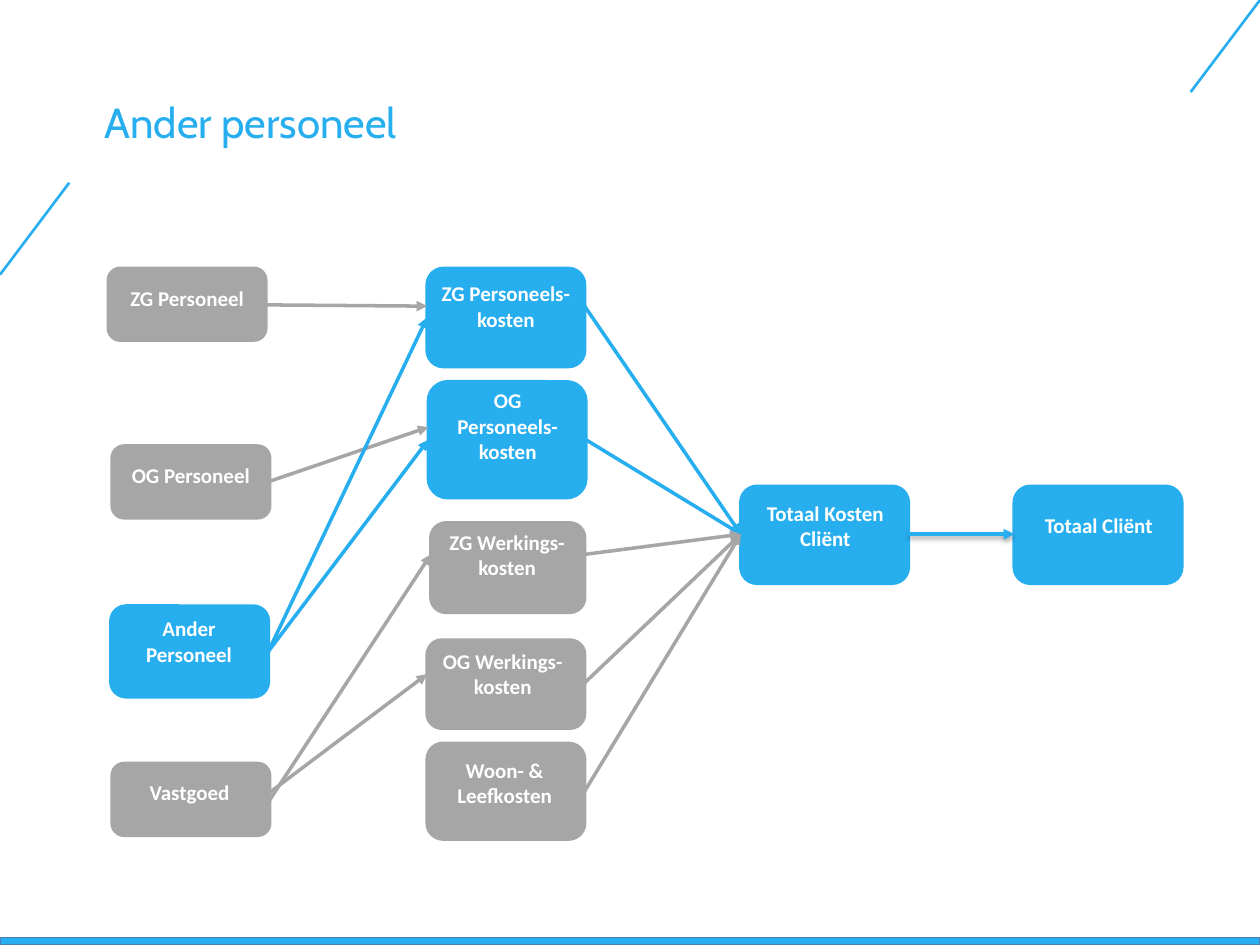
from dataclasses import dataclass

import lxml.etree
import pptx
import pptx.dml.color
import pptx.enum.shapes
import pptx.enum.text
import pptx.oxml
import pptx.oxml.ns
import pptx.util

# The slide is a grid of 100 columns and 75 rows of square cells.
COLUMNS, ROWS = 100, 75
CELL = pptx.util.Inches(0.1)
BLUE, GREY, WHITE, EDGE = "27AEEF", "A6A6A6", "FFFFFF", "4B7EBC"


@dataclass(frozen=True)
class Node:
    """A rounded box; the label frame is offset from its top left corner."""
    label: str
    left: float
    top: float
    width: float
    height: float
    color: str
    label_dx: float
    label_dy: float
    label_width: float
    label_lines: int


@dataclass(frozen=True)
class Flow:
    """An arrow from the right side of one node to the left side of another."""
    source: str
    target: str
    start_row: float
    end_row: float
    color: str
    shadow: bool = False


NODES = [
    Node("ZG Personeel", 8.6, 21.3, 12.5, 5.7, GREY, 0, 0.9, 12.5, 1),
    Node("OG Personeel", 8.9, 35.4, 12.5, 5.7, GREY, 0.1, 0.8, 12.3, 1),
    Node("Ander Personeel", 8.8, 48.1, 12.5, 7.2, BLUE, 0.1, 0.3, 12.2, 2),
    Node("Vastgoed", 8.9, 60.6, 12.5, 5.7, GREY, -0.1, 0.8, 12.5, 1),
    Node("ZG Personeels-kosten", 33.9, 21.3, 12.5, 7.8, BLUE, 0, 0.5, 12.5, 2),
    Node("OG Personeels-kosten", 34, 30.3, 12.5, 9.2, BLUE, 0.1, 0, 12.4, 3),
    Node("ZG Werkings-kosten", 34.2, 41.5, 12.2, 7.1, GREY, 0.2, 0, 11.7, 2),
    Node("OG Werkings-kosten", 33.9, 50.8, 12.5, 7, GREY, 0.1, 0.2, 11.8, 2),
    Node("Woon- & Leefkosten", 33.9, 59, 12.5, 7.6, GREY, 0.3, 0.6, 11.7, 2),
    Node("Totaal Kosten Cliënt", 58.8, 38.6, 13.3, 7.7, BLUE, 0.1, 0.6, 13.2, 2),
    Node("Totaal Cliënt", 80.5, 38.6, 13.3, 7.7, BLUE, 0.1, 1.6, 13.2, 1),
]

TOTAL = "Totaal Kosten Cliënt"
TOTAL_ROW = 42.4
FLOWS = [
    Flow("ZG Personeel", "ZG Personeels-kosten", 24.2, 24.3, GREY),
    Flow("OG Personeel", "OG Personeels-kosten", 38.2, 33.9, GREY),
    Flow("Ander Personeel", "OG Personeels-kosten", 51.7, 34.9, BLUE),
    Flow("Ander Personeel", "ZG Personeels-kosten", 51.7, 25.2, BLUE),
    Flow("Vastgoed", "OG Werkings-kosten", 62.9, 53.5, GREY),
    Flow("Vastgoed", "ZG Werkings-kosten", 63.5, 44, GREY),
    Flow("OG Personeels-kosten", TOTAL, 34.9, TOTAL_ROW, BLUE),
    Flow("ZG Werkings-kosten", TOTAL, 44, TOTAL_ROW, GREY),
    Flow("OG Werkings-kosten", TOTAL, 54.2, TOTAL_ROW, GREY),
    Flow("Woon- & Leefkosten", TOTAL, 62.8, TOTAL_ROW, GREY),
    Flow("ZG Personeels-kosten", TOTAL, 24.3, TOTAL_ROW, BLUE),
    Flow(TOTAL, "Totaal Cliënt", TOTAL_ROW, TOTAL_ROW, BLUE, shadow=True),
]


def cells(*counts: float) -> list[int]:
    return [round(count * CELL) for count in counts]


def paint(color_format_owner, color: str) -> None:
    """Give a solid colour to a fill."""
    color_format_owner.solid()
    color_format_owner.fore_color.rgb = pptx.dml.color.RGBColor.from_string(color)


def add_box(slide, preset, area: tuple, fill: str, edge: str, edge_width: float):
    box = slide.shapes.add_shape(preset, *cells(*area))
    box.shadow.inherit = False
    paint(box.fill, fill)
    paint(box.line.fill, edge)
    box.line.width = pptx.util.Pt(edge_width)


def add_text(slide, text: str, area: tuple, size: float, font: str, color: str,
             bold: bool = False, centred: bool = False) -> None:
    frame = slide.shapes.add_textbox(*cells(*area)).text_frame
    frame.word_wrap = True
    frame.text = text
    paragraph = frame.paragraphs[0]
    if centred:
        paragraph.alignment = pptx.enum.text.PP_ALIGN.CENTER
    run = paragraph.runs[0]
    run.font.name, run.font.size, run.font.bold = font, pptx.util.Pt(size), bold
    paint(run.font.fill, color)


def add_line(slide, ends: tuple, color: str, width: float,
             arrow: bool = False, shadow: bool = False) -> None:
    line = slide.shapes.add_connector(
        pptx.enum.shapes.MSO_CONNECTOR.STRAIGHT, *cells(*ends))
    paint(line.line.fill, color)
    line.line.width = pptx.util.Pt(width)
    qn = pptx.oxml.ns.qn
    properties = line._element.spPr
    if arrow:
        outline = properties.find(qn("a:ln"))
        lxml.etree.SubElement(outline, qn("a:tailEnd"), type="triangle")
    effects = lxml.etree.SubElement(properties, qn("a:effectLst"))
    if shadow:
        cast = lxml.etree.SubElement(
            effects, qn("a:outerShdw"), blurRad=str(pptx.util.Pt(3.1)),
            dist=str(pptx.util.Pt(1.6)), dir="5400000", rotWithShape="0")
        black = lxml.etree.SubElement(cast, qn("a:srgbClr"), val="000000")
        lxml.etree.SubElement(black, qn("a:alpha"), val="38000")


def add_node(slide, node: Node) -> None:
    add_box(slide, pptx.enum.shapes.MSO_SHAPE.ROUNDED_RECTANGLE,
            (node.left, node.top, node.width, node.height),
            node.color, node.color, 2)
    label_area = (node.left + node.label_dx, node.top + node.label_dy,
                  node.label_width, 1 + 2 * node.label_lines)
    add_text(slide, node.label, label_area, 12, "Calibri", WHITE,
             bold=True, centred=True)


def add_flow(slide, flow: Flow, nodes: dict[str, Node]) -> None:
    source, target = nodes[flow.source], nodes[flow.target]
    ends = (source.left + source.width, flow.start_row, target.left, flow.end_row)
    add_line(slide, ends, flow.color, 2, arrow=True, shadow=flow.shadow)


def main() -> None:
    deck = pptx.Presentation()
    deck.slide_width, deck.slide_height = cells(COLUMNS, ROWS)
    slide = deck.slides.add_slide(deck.slide_layouts[6])

    add_box(slide, pptx.enum.shapes.MSO_SHAPE.RECTANGLE,
            (0, 74.4, COLUMNS, 0.6), BLUE, EDGE, 0.75)
    for accent in ((5.5, 14.5, 0, 21.8), (COLUMNS, 0, 94.5, 7.3)):
        add_line(slide, accent, BLUE, 1.5)
    add_text(slide, "Ander personeel", (7.3, 7.2, 82.8, 6.3), 24, "Cabin", BLUE)

    for node in NODES:
        add_node(slide, node)
    nodes = {node.label: node for node in NODES}
    for flow in FLOWS:
        add_flow(slide, flow, nodes)
    deck.save("out.pptx")


if __name__ == "__main__":
    main()
